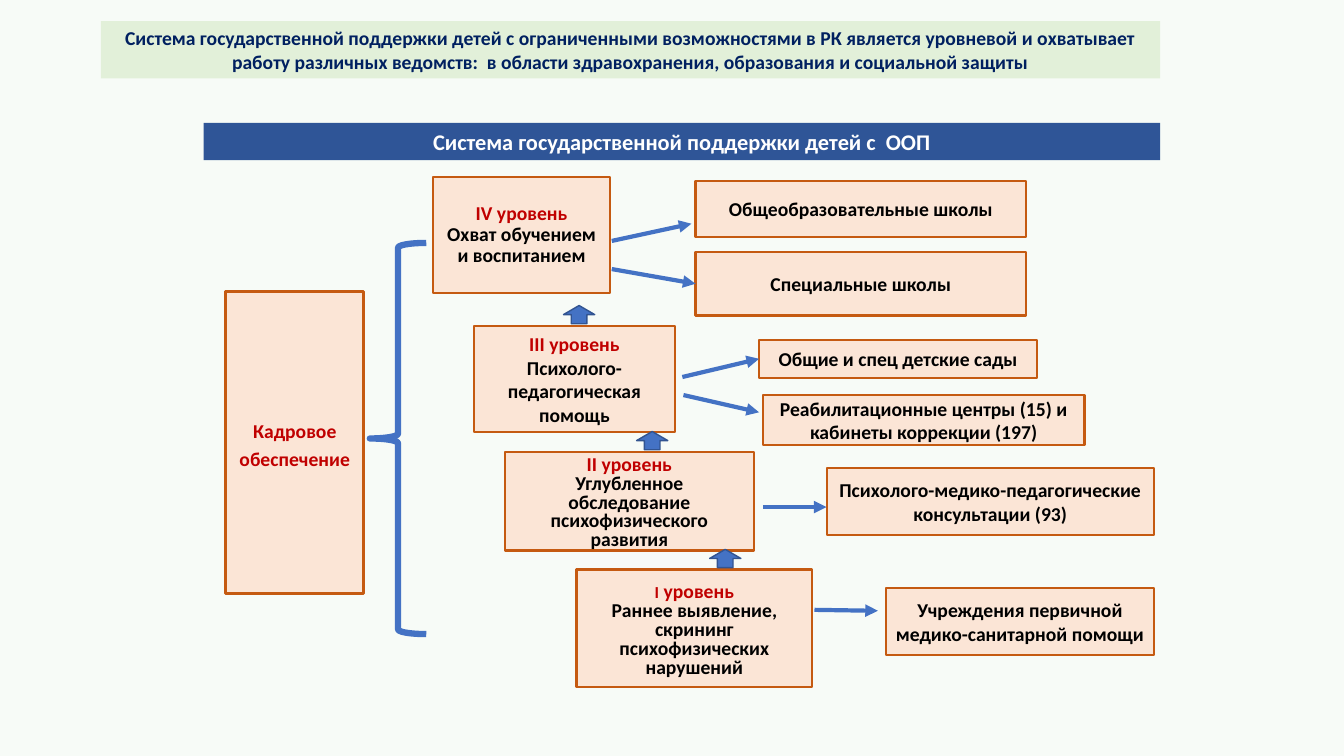
from dataclasses import dataclass
from typing import Any, Optional

import pptx
import pptx.dml.color
import pptx.enum.dml
import pptx.enum.shapes
import pptx.enum.text
import pptx.oxml
import pptx.oxml.ns
import pptx.util

Pt = pptx.util.Pt
SHAPES = pptx.enum.shapes.MSO_SHAPE
ANCHORS = pptx.enum.text.MSO_ANCHOR

COLORS = {
    "background": "F7FBF7", "title fill": "E2F0D9", "title text": "002060",
    "banner": "2F5597", "white": "FFFFFF", "box fill": "FBE5D6",
    "box line": "C55A11", "heading": "C00000", "body": "000000",
    "arrow": "4472C4", "arrow outline": "325491",
}
LEFT_SIDE = 1
STEP_UP_GAP = 14.4  # from the top of a step arrow to the level below it


@dataclass(frozen=True)
class Box:
    left: float
    top: float
    width: float
    height: float


@dataclass(frozen=True)
class Institution:
    lines: tuple[str, ...]
    box: Box
    arrow_start: tuple[float, float]
    arrow_end: Optional[tuple[float, float]] = None  # None: joined to the box


@dataclass(frozen=True)
class Level:
    numeral: str
    lines: tuple[str, ...]
    box: Box
    institutions: tuple[Institution, ...]
    numeral_size: float = 14
    heading_spacing: float = 1
    body_spacing: float = 1


LEVELS = (
    Level("IV", ("Охват обучением и воспитанием",), Box(309.6, 126.7, 126, 82.8), (
        Institution(("Общеобразовательные школы",), Box(496.8, 129.6, 236.2, 39.6),
                    (437, 172.1), (493.9, 159.8)),
        Institution(("Специальные школы",), Box(496.8, 180, 236.2, 45.4),
                    (437, 192.2)),
    ), heading_spacing=0.9, body_spacing=0.9),
    Level("III", ("Психолого-педагогическая", "помощь"), Box(338.4, 232.6, 144, 76.3), (
        Institution(("Общие и спец детские сады",), Box(542.2, 242.6, 198.7, 27.4),
                    (487.4, 269.3)),
        Institution(("Реабилитационные центры (15) и кабинеты коррекции (197)",),
                    Box(545, 282.2, 229.7, 36), (488.2, 282.2), (542.2, 294.5)),
    )),
    Level("II", ("Углубленное обследование", "психофизического развития"),
          Box(360.7, 322.6, 177.8, 70.6), (
        Institution(("Психолого-медико-педагогические", "консультации (93)"),
                    Box(590.4, 334.1, 234, 48.2), (545, 362.2), (590.4, 362.2)),
    ), body_spacing=0.8),
    Level("I", ("Раннее выявление, скрининг психофизических", "нарушений"),
          Box(411.8, 406.8, 168.5, 84.2), (
        Institution(("Учреждения первичной медико-санитарной помощи",),
                    Box(632.9, 419.8, 191.5, 48.2), (581.8, 435.6), (627.1, 436.3)),
    ), numeral_size=12, body_spacing=0.8),
)


def rgb(name: str) -> pptx.dml.color.RGBColor:
    return pptx.dml.color.RGBColor.from_string(COLORS[name])


def write(shape: Any, text: str, *, color: str = "body", size: float = 14,
          spacing: float = 1, same_line: bool = False) -> None:
    """Add a centred bold paragraph, or extend the last one if same_line."""
    frame = shape.text_frame
    paragraph = frame.paragraphs[-1]
    if paragraph.runs and not same_line:
        paragraph = frame.add_paragraph()
    paragraph.alignment = pptx.enum.text.PP_ALIGN.CENTER
    paragraph.line_spacing = spacing
    run = paragraph.add_run()
    run.text = text
    run.font.name = "Calibri"
    run.font.size = Pt(size)
    run.font.bold = True
    run.font.color.rgb = rgb(color)


def add_figure(slide: Any, box: Box, *, preset: Any = SHAPES.RECTANGLE,
               fill: Optional[str] = "box fill", line: Optional[str] = "box line",
               line_width: float = 1.5, anchor: Any = ANCHORS.MIDDLE) -> Any:
    figure = slide.shapes.add_shape(
        preset, Pt(box.left), Pt(box.top), Pt(box.width), Pt(box.height))
    figure.shadow.inherit = False
    if fill:
        figure.fill.solid()
        figure.fill.fore_color.rgb = rgb(fill)
    else:
        figure.fill.background()
    if line:
        figure.line.color.rgb = rgb(line)
        figure.line.width = Pt(line_width)
    else:
        figure.line.fill.background()
    figure.text_frame.word_wrap = True
    figure.text_frame.vertical_anchor = anchor
    return figure


def add_caption_bar(slide: Any, text: str, box: Box, *, fill: str, color: str,
                    size: float) -> None:
    bar = add_figure(slide, box, fill=fill, line=None, anchor=ANCHORS.TOP)
    bar.text_frame.auto_size = pptx.enum.text.MSO_AUTO_SIZE.SHAPE_TO_FIT_TEXT
    write(bar, text, color=color, size=size)


def add_arrow(slide: Any, start: tuple[float, float],
              end: Optional[tuple[float, float]], target: Any) -> None:
    """Draw an arrow to end, or join it to the target's left side."""
    end_x, end_y = end or start
    arrow = slide.shapes.add_connector(
        pptx.enum.shapes.MSO_CONNECTOR.STRAIGHT,
        Pt(start[0]), Pt(start[1]), Pt(end_x), Pt(end_y))
    if end is None:
        arrow.end_connect(target, LEFT_SIDE)
    arrow.line.color.rgb = rgb("arrow")
    arrow.line.width = Pt(3)
    head = pptx.oxml.parse_xml(
        f'<a:tailEnd {pptx.oxml.ns.nsdecls("a")} type="triangle"/>')
    arrow.line._get_or_add_ln().append(head)
    properties = arrow._element.spPr
    properties.append(pptx.oxml.parse_xml(
        f'<a:effectLst {pptx.oxml.ns.nsdecls("a")}/>'))


def add_level(slide: Any, level: Level) -> None:
    level_box = add_figure(slide, level.box)
    write(level_box, level.numeral, color="heading", size=level.numeral_size,
          spacing=level.heading_spacing)
    write(level_box, " уровень", color="heading",
          spacing=level.heading_spacing, same_line=True)
    for line in level.lines:
        write(level_box, line, spacing=level.body_spacing)
    for institution in level.institutions:
        institution_box = add_figure(slide, institution.box)
        for line in institution.lines:
            write(institution_box, line)
        add_arrow(slide, institution.arrow_start, institution.arrow_end,
                  institution_box)


def main() -> None:
    presentation = pptx.Presentation()
    presentation.slide_width = Pt(960)
    presentation.slide_height = Pt(540)
    slide = presentation.slides.add_slide(presentation.slide_layouts[6])
    slide.background.fill.solid()
    slide.background.fill.fore_color.rgb = rgb("background")

    add_figure(slide, Box(264.2, 173.5, 40.3, 279.4), preset=SHAPES.LEFT_BRACE,
               fill=None, line="arrow", line_width=4.5)
    for level in LEVELS:
        add_level(slide, level)
    for step, lower_level in enumerate(LEVELS[1:]):
        add_figure(slide, Box(402.5 + 52.2 * step, lower_level.box.top - STEP_UP_GAP,
                              22.3, 13),
                   preset=SHAPES.UP_ARROW, fill="arrow", line="arrow outline",
                   line_width=1)

    staffing = add_figure(slide, Box(161.3, 208.1, 98.6, 216), line_width=2.25)
    write(staffing, "Кадровое обеспечение", color="heading", spacing=1.2)

    add_caption_bar(
        slide,
        "Система государственной поддержки детей с ограниченными возможностями "
        "в РК является уровневой и охватывает работу различных ведомств:  "
        "в области здравохранения, образования и социальной защиты",
        Box(72, 15.1, 756.7, 41), fill="title fill", color="title text", size=14)
    add_caption_bar(slide, "Система государственной поддержки детей с  ООП",
                    Box(145.4, 87.8, 683.3, 26.6), fill="banner", color="white", size=16)
    presentation.save("out.pptx")


if __name__ == "__main__":
    main()
